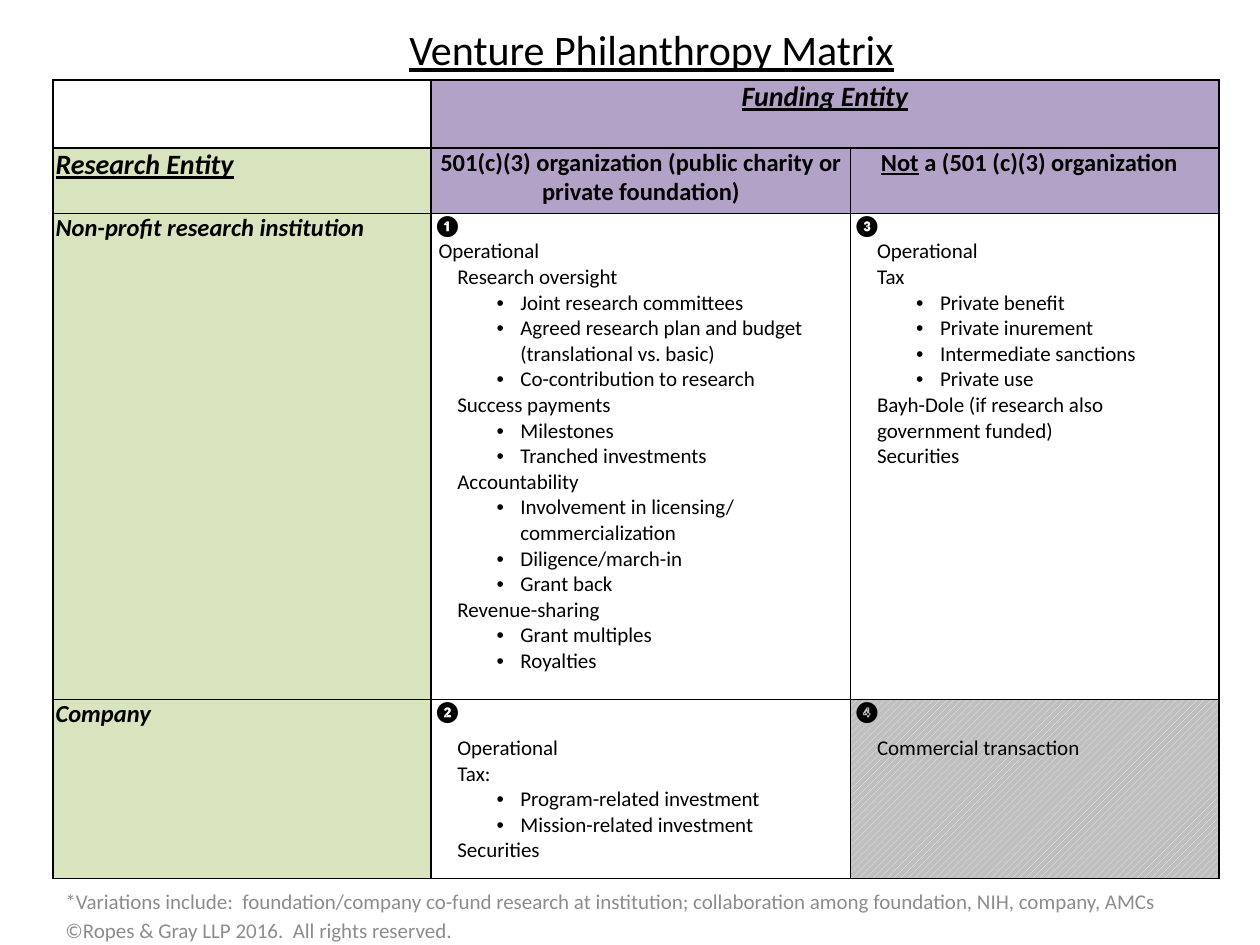
from dataclasses import dataclass
from typing import Optional

import pptx
import pptx.dml.color
import pptx.enum.dml
import pptx.enum.text
import pptx.oxml.ns
import pptx.util
from lxml import etree

Cm = pptx.util.Cm
Pt = pptx.util.Pt
RGBColor = pptx.dml.color.RGBColor
ALIGN = pptx.enum.text.PP_ALIGN
qn = pptx.oxml.ns.qn

BLACK = RGBColor(0x00, 0x00, 0x00)
FOOTER_GRAY = RGBColor(0x8C, 0x8C, 0x8C)
PURPLE = RGBColor(0xB3, 0xA2, 0xC7)
GREEN = RGBColor(0xD7, 0xE4, 0xBD)
HATCH_LIGHT = RGBColor(0xF2, 0xF2, 0xF2)
HATCH_DARK = RGBColor(0xBF, 0xBF, 0xBF)

FONT = "Calibri"
COLUMN_WIDTHS = (7.62, 8.46, 7.42)
ROW_HEIGHTS = (1.37, 1.32, 9.8, 3.61)
TOPIC_INDENT = 0.48
BULLET_INDENT = 1.75
BULLET_HANGING = 0.48


@dataclass
class Line:
    text: str
    indent: float = TOPIC_INDENT
    bullet: bool = False
    bold: bool = False
    before: float = 0


def marker(text: str) -> Line:
    return Line(text, indent=0, bold=True)


def bullets(*texts: str) -> list[Line]:
    return [Line(text, indent=BULLET_INDENT, bullet=True) for text in texts]


@dataclass
class Heading:
    row: int
    column: int
    text: str
    fill: RGBColor
    size: float
    italic: bool = False
    underline: bool = False
    align: ALIGN = ALIGN.LEFT


@dataclass
class Quadrant:
    row: int
    column: int
    lines: list[Line]
    hatched: bool = False


HEADINGS = [
    Heading(0, 1, "Funding Entity", PURPLE, 16, True, True, ALIGN.CENTER),
    Heading(1, 0, "Research Entity", GREEN, 16, True, True),
    Heading(1, 1, "501(c)(3) organization (public charity or private foundation)",
            PURPLE, 14, align=ALIGN.CENTER),
    Heading(1, 2, "Not", PURPLE, 14, underline=True, align=ALIGN.CENTER),
    Heading(2, 0, "Non-profit research institution", GREEN, 14, True),
    Heading(3, 0, "Company", GREEN, 14, True),
]

QUADRANTS = [
    Quadrant(2, 1, [
        marker("❶"),
        Line("Operational", indent=0.1),
        Line("Research oversight"),
        *bullets("Joint research committees",
                 "Agreed research plan and budget (translational vs. basic)",
                 "Co-contribution to research"),
        Line("Success payments"),
        *bullets("Milestones", "Tranched investments"),
        Line("Accountability"),
        *bullets("Involvement in licensing/ commercialization",
                 "Diligence/march-in", "Grant back"),
        Line("Revenue-sharing"),
        *bullets("Grant multiples", "Royalties"),
    ]),
    Quadrant(2, 2, [
        marker("❸"),
        Line("Operational"),
        Line("Tax"),
        *bullets("Private benefit", "Private inurement",
                 "Intermediate sanctions", "Private use"),
        Line("Bayh-Dole (if research also\vgovernment funded)"),
        Line("Securities"),
    ]),
    Quadrant(3, 1, [
        marker("❷"),
        Line("Operational", before=6),
        Line("Tax:"),
        *bullets("Program-related investment", "Mission-related investment"),
        Line("Securities"),
    ]),
    Quadrant(3, 2, [marker("❹"), Line("Commercial transaction", before=6)], hatched=True),
]


def write(frame, text: str, *, size: float = 12, color: RGBColor = BLACK,
          bold: bool = False, italic: bool = False, underline: bool = False,
          align: ALIGN = ALIGN.LEFT, before: float = 0, indent: float = 0,
          bullet: bool = False, new: bool = True):
    """Write text as a paragraph, or as a further run of the last one."""
    paragraph = frame.paragraphs[-1]
    if new:
        if paragraph.runs:
            paragraph = frame.add_paragraph()
        paragraph.alignment = align
        paragraph.space_before = Pt(before)
        properties = paragraph._p.get_or_add_pPr()
        properties.set("marL", str(Cm(indent)))
        properties.set("indent", str(-Cm(BULLET_HANGING) if bullet else 0))
        if bullet:
            etree.SubElement(properties, qn("a:buFont")).set("typeface", "Arial")
            etree.SubElement(properties, qn("a:buChar")).set("char", "•")
        else:
            etree.SubElement(properties, qn("a:buNone"))
    for number, part in enumerate(text.split("\v")):
        if number:
            paragraph.add_line_break()
        run = paragraph.add_run()
        run.text = part
        font = run.font
        font.name, font.size, font.color.rgb = FONT, Pt(size), color
        font.bold, font.italic, font.underline = bold, italic, underline


def add_text_box(slide, left: float, top: float, width: float, height: float):
    box = slide.shapes.add_textbox(Cm(left), Cm(top), Cm(width), Cm(height))
    box.text_frame.word_wrap = True
    return box.text_frame


def set_borders(cell) -> None:
    properties = cell._tc.get_or_add_tcPr()
    for position, side in enumerate(("a:lnL", "a:lnR", "a:lnT", "a:lnB")):
        line = etree.Element(qn(side), w=str(Pt(1)))
        fill = etree.SubElement(line, qn("a:solidFill"))
        etree.SubElement(fill, qn("a:srgbClr")).set("val", str(BLACK))
        properties.insert(position, line)


def add_matrix(slide):
    table = slide.shapes.add_table(
        len(ROW_HEIGHTS), len(COLUMN_WIDTHS), Cm(1.07), Cm(1.61),
        Cm(sum(COLUMN_WIDTHS)), Cm(sum(ROW_HEIGHTS))).table
    table.first_row = table.horz_banding = False
    for column, width in zip(table.columns, COLUMN_WIDTHS):
        column.width = Cm(width)
    for row, height in zip(table.rows, ROW_HEIGHTS):
        row.height = Cm(height)
    for cell in table.iter_cells():
        cell.margin_left = cell.margin_right = Cm(0.05)
        cell.margin_top = cell.margin_bottom = 0
        cell.fill.background()
        set_borders(cell)
    table.cell(0, 1).merge(table.cell(0, 2))
    return table


def fill_heading(table, heading: Heading) -> None:
    cell = table.cell(heading.row, heading.column)
    cell.fill.solid()
    cell.fill.fore_color.rgb = heading.fill
    write(cell.text_frame, heading.text, size=heading.size, bold=True,
          italic=heading.italic, underline=heading.underline, align=heading.align)


def fill_quadrant(table, quadrant: Quadrant) -> None:
    cell = table.cell(quadrant.row, quadrant.column)
    if quadrant.hatched:
        cell.fill.patterned()
        cell.fill.pattern = pptx.enum.dml.MSO_PATTERN.WIDE_UPWARD_DIAGONAL
        cell.fill.fore_color.rgb = HATCH_LIGHT
        cell.fill.back_color.rgb = HATCH_DARK
    for line in quadrant.lines:
        write(cell.text_frame, line.text, bold=line.bold, before=line.before,
              indent=line.indent, bullet=line.bullet)


def main() -> None:
    presentation = pptx.Presentation()
    presentation.slide_width, presentation.slide_height = Cm(25.4), Cm(19.05)
    slide = presentation.slides.add_slide(presentation.slide_layouts[6])

    # Title
    title = add_text_box(slide, 2.34, 0.2, 21.59, 1.9)
    title.vertical_anchor = pptx.enum.text.MSO_ANCHOR.MIDDLE
    title.margin_top, title.margin_bottom = 0, Cm(0.33)
    write(title, "Venture Philanthropy Matrix", size=24, underline=True, align=ALIGN.CENTER)

    # Matrix
    table = add_matrix(slide)
    for heading in HEADINGS:
        fill_heading(table, heading)
    not_charity = table.cell(1, 2)
    not_charity.margin_right = Cm(0.27)
    write(not_charity.text_frame, " a (501 (c)(3) organization", size=14, bold=True, new=False)
    for quadrant in QUADRANTS:
        fill_quadrant(table, quadrant)

    # Footer
    footer = add_text_box(slide, 1.07, 17.78, 23.32, 1.27)
    write(footer, "*Variations include:  foundation/company co-fund research at institution; "
          "collaboration among foundation, NIH, company, AMCs", color=FOOTER_GRAY)
    write(footer, "©Ropes & Gray LLP 2016.  All rights reserved.", color=FOOTER_GRAY, before=2.4)

    presentation.save("out.pptx")


if __name__ == "__main__":
    main()
